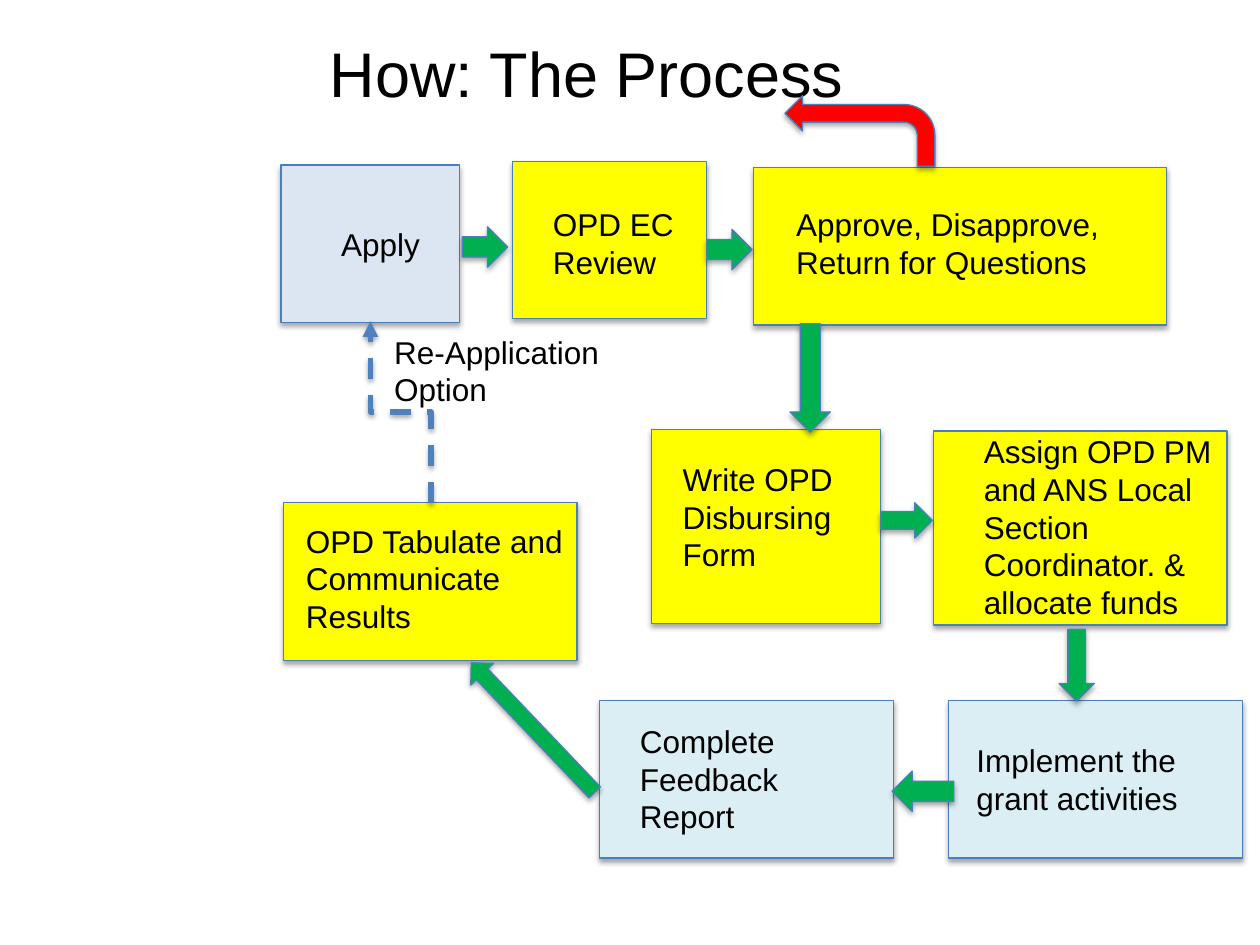
from dataclasses import dataclass
from typing import NamedTuple

from lxml.etree import SubElement as Sub
from pptx import Presentation
from pptx.dml.color import RGBColor
from pptx.enum.dml import MSO_LINE as Dash
from pptx.enum.shapes import MSO_CONNECTOR as Conn, MSO_SHAPE as Kind
from pptx.enum.text import MSO_ANCHOR as Anchor
from pptx.oxml.ns import qn
from pptx.util import Inches, Pt


@dataclass(frozen=True)
class Theme:
    font: str = "Arial"
    title: int = 36
    body: int = 18
    ink: str = "000000"
    edge: str = "4B7EBC"
    link: str = "4F81BD"
    yellow: str = "FFFF00"
    blue: str = "DCE6F2"
    aqua: str = "DBEEF4"
    green: str = "00B050"
    red: str = "FF0000"


class Area(NamedTuple):
    left: float
    top: float
    width: float
    height: float


class Step(NamedTuple):
    text: str
    box: Area
    label: Area
    fill: str


class Arrow(NamedTuple):
    area: Area
    turn: float = 0


theme = Theme()

STEPS = [
    Step("Approve, Disapprove, Return for Questions",
         Area(5.98, 1.33, 3.28, 1.25), Area(6.22, 1.58, 3.32, 1.01), theme.yellow),
    Step("Apply",
         Area(2.23, 1.31, 1.42, 1.25), Area(2.61, 1.74, 1.18, 0.4), theme.blue),
    Step("Complete Feedback Report",
         Area(4.76, 5.56, 2.33, 1.25), Area(4.98, 5.68, 1.88, 1.01), theme.aqua),
    Step("OPD EC Review",
         Area(4.07, 1.28, 1.54, 1.25), Area(4.29, 1.58, 1.58, 0.71), theme.yellow),
    Step("Implement the grant activities",
         Area(7.53, 5.56, 2.33, 1.25), Area(7.65, 5.83, 2.05, 0.71), theme.aqua),
    Step("Assign OPD PM and ANS Local Section Coordinator. & allocate funds",
         Area(7.41, 3.42, 2.33, 1.54), Area(7.71, 3.38, 2.02, 1.62), theme.yellow),
    Step("OPD Tabulate and Communicate Results",
         Area(2.25, 3.99, 2.33, 1.25), Area(2.33, 4.09, 2.31, 1.01), theme.yellow),
    Step("Write OPD Disbursing Form",
         Area(5.17, 3.41, 1.82, 1.54), Area(5.32, 3.6, 2.02, 1.01), theme.yellow),
]

ARROWS = [
    Arrow(Area(3.67, 1.8, 0.36, 0.32)),
    Arrow(Area(5.61, 1.82, 0.36, 0.32)),
    Arrow(Area(6, 2.84, 0.86, 0.32), 90),
    Arrow(Area(6.99, 3.99, 0.41, 0.28)),
    Arrow(Area(8.26, 5.14, 0.57, 0.28), 90),
    Arrow(Area(7.08, 6.12, 0.49, 0.32), 180),
    Arrow(Area(3.52, 5.65, 1.42, 0.25), 226.4),
]


def place(area: Area) -> list:
    return [Inches(side) for side in area]


def shade(shape, alpha: int) -> None:
    props = shape._element.spPr
    for old in props.findall(qn("a:effectLst")):
        props.remove(old)
    cast = Sub(Sub(props, qn("a:effectLst")), qn("a:outerShdw"),
               blurRad=str(Pt(3.1)), dist=str(Pt(1.8)),
               dir="5400000", rotWithShape="0")
    tone = Sub(cast, qn("a:srgbClr"), val=theme.ink)
    Sub(tone, qn("a:alpha"), val=str(alpha * 1000))


def draw(slide, kind: Kind, area: Area, fill: str, turn: float = 0):
    shape = slide.shapes.add_shape(kind, *place(area))
    shape.rotation = turn
    shape.fill.solid()
    shape.fill.fore_color.rgb = RGBColor.from_string(fill)
    shape.line.color.rgb = RGBColor.from_string(theme.edge)
    shape.line.width = Pt(0.75)
    shade(shape, 35)
    return shape


def write(slide, text: str, area: Area, size: int, anchor=Anchor.TOP) -> None:
    frame = slide.shapes.add_textbox(*place(area)).text_frame
    frame.word_wrap = True
    frame.vertical_anchor = anchor
    frame.text = text
    font = frame.paragraphs[0].runs[0].font
    font.name = theme.font
    font.size = Pt(size)
    font.color.rgb = RGBColor.from_string(theme.ink)


def link(slide) -> None:
    ends = [Inches(end) for end in (2.46, 3.51, 3.9, 3.03)]
    path_line = slide.shapes.add_connector(Conn.ELBOW, *ends)
    path_line.line.color.rgb = RGBColor.from_string(theme.link)
    path_line.line.width = Pt(3)
    path_line.line.dash_style = Dash.DASH
    props = path_line._element.spPr
    props.find(qn("a:xfrm")).set("rot", str(270 * 60000))
    Sub(props.find(qn("a:ln")), qn("a:tailEnd"), type="triangle")
    shade(path_line, 38)


def main() -> None:
    deck = Presentation()
    deck.slide_width, deck.slide_height = Inches(10), Inches(7.5)
    slide = deck.slides.add_slide(deck.slide_layouts[6])
    write(slide, "How: The Process", Area(2.52, -0.05, 6.9, 1.25),
          theme.title, Anchor.MIDDLE)
    for step in STEPS:
        draw(slide, Kind.RECTANGLE, step.box, step.fill)
        write(slide, step.text, step.label, theme.body)
    for arrow in ARROWS:
        draw(slide, Kind.RIGHT_ARROW, arrow.area, theme.green, arrow.turn)
    back = draw(slide, Kind.BENT_ARROW, Area(6.23, 0.76, 1.19, 0.56), theme.red)
    back._element.spPr.find(qn("a:xfrm")).set("flipH", "1")
    link(slide)
    write(slide, "Re-Application Option", Area(3.03, 2.59, 1.91, 0.71), theme.body)
    deck.save("out.pptx")


if __name__ == "__main__":
    main()
